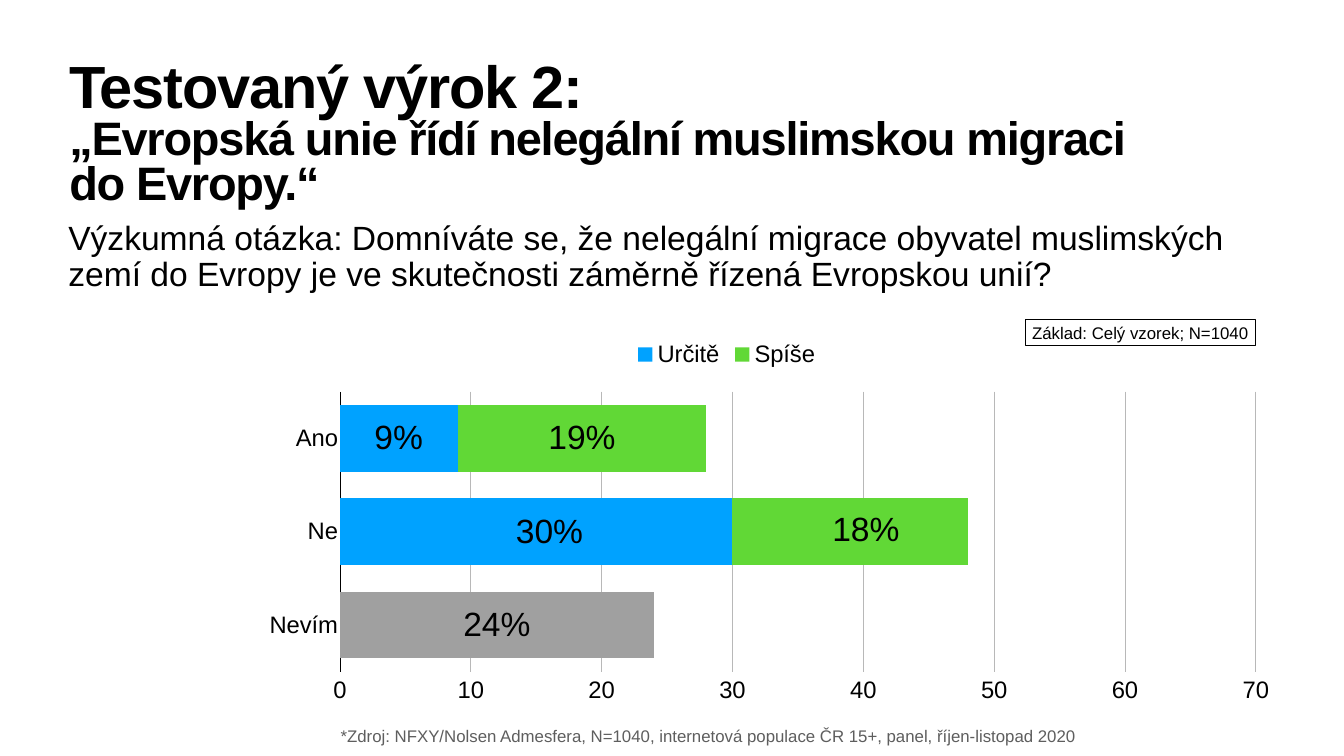
from lxml import etree
from pptx import Presentation
from pptx.chart.data import CategoryChartData
from pptx.dml.color import RGBColor
from pptx.enum.chart import XL_CHART_TYPE, XL_LABEL_POSITION, XL_LEGEND_POSITION, XL_TICK_LABEL_POSITION, XL_TICK_MARK
from pptx.enum.shapes import MSO_SHAPE
from pptx.enum.text import MSO_ANCHOR, MSO_AUTO_SIZE, PP_ALIGN
from pptx.oxml.ns import qn
from pptx.util import Pt

BAR_STACKED = XL_CHART_TYPE.BAR_STACKED
CENTER_LABEL = XL_LABEL_POSITION.CENTER
LEGEND_TOP = XL_LEGEND_POSITION.TOP
HIGH = XL_TICK_LABEL_POSITION.HIGH
NO_TICK = XL_TICK_MARK.NONE
RECTANGLE = MSO_SHAPE.RECTANGLE
TOP, MIDDLE = MSO_ANCHOR.TOP, MSO_ANCHOR.MIDDLE
LEFT, CENTER = PP_ALIGN.LEFT, PP_ALIGN.CENTER
NO_AUTO_SIZE = MSO_AUTO_SIZE.NONE

FONT = "Arial"
BLACK, GRAY, GRID = "000000", "5E5E5E", "B8B8B8"
BLUE, GREEN, NEUTRAL = "00A2FF", "61D836", "A0A0A0"
PERCENT = '#,##0"%"'
INSET = 4


def color(value):
    return RGBColor.from_string(value)


def style_font(font, size, value=BLACK, bold=False):
    font.name = FONT
    font.size = Pt(size)
    font.bold = bold
    font.color.rgb = color(value)


def style_line(line, value):
    line.color.rgb = color(value)
    line.width = Pt(1)


def place(shape, left, top, width, height):
    shape.left, shape.top = Pt(left), Pt(top)
    shape.width, shape.height = Pt(width), Pt(height)


def prepare_frame(shape, anchor, inset=INSET):
    frame = shape.text_frame
    frame.word_wrap = True
    frame.auto_size = NO_AUTO_SIZE
    frame.vertical_anchor = anchor
    frame.margin_left = frame.margin_right = Pt(inset)
    frame.margin_top = frame.margin_bottom = Pt(INSET)
    return frame.paragraphs[0]


def fill_title(title):
    place(title, 95, 85, 1779, 227.5)
    paragraph = prepare_frame(title, TOP)
    paragraph.alignment = LEFT
    paragraph.line_spacing = 0.8
    paragraph.space_before = Pt(0)
    lines = [
        ("Testovaný výrok 2:", 85),
        ("„Evropská unie řídí nelegální muslimskou migraci", 67),
        ("do Evropy.“", 67),
    ]
    for index, (text, size) in enumerate(lines):
        if index:
            paragraph.add_line_break()
        run = paragraph.add_run()
        run.text = text
        style_font(run.font, size, bold=True)
        run.font._element.set("spc", "-170")


def fill_body(body):
    place(body, 93.6, 312.5, 1730, 620)
    paragraph = prepare_frame(body, TOP)
    paragraph.text = (
        "Výzkumná otázka: Domníváte se, že nelegální migrace obyvatel muslimských "
        "zemí do Evropy je ve skutečnosti záměrně řízená Evropskou unií?"
    )
    paragraph.line_spacing = 0.9
    paragraph.space_before = Pt(0)
    style_font(paragraph.font, 48)
    properties = paragraph._p.get_or_add_pPr()
    properties.set("marL", "0")
    properties.set("indent", "0")
    bullet = etree.Element(qn("a:buNone"))
    properties.find(qn("a:defRPr")).addprevious(bullet)


def add_note(shape, text, value, inset):
    shape.shadow.inherit = False
    paragraph = prepare_frame(shape, MIDDLE, inset)
    paragraph.text = text
    paragraph.alignment = CENTER
    style_font(paragraph.font, 24, value)


def make_layout(**settings):
    layout = etree.Element(qn("c:layout"))
    manual = etree.SubElement(layout, qn("c:manualLayout"))
    for name, value in settings.items():
        etree.SubElement(manual, qn(f"c:{name}")).set("val", str(value))
    return layout


def set_plot_layout(chart):
    area = chart._chartSpace.chart.plotArea
    for layout in area.findall(qn("c:layout")):
        area.remove(layout)
    area.insert(0, make_layout(
        layoutTarget="inner", xMode="edge", yMode="edge",
        x=0.226, y=0.181, w=0.757, h=0.712,
    ))


def style_axes(chart):
    categories, values = chart.category_axis, chart.value_axis
    for axis in (categories, values):
        axis.major_tick_mark = axis.minor_tick_mark = NO_TICK
        style_font(axis.tick_labels.font, 34)
    categories.reverse_order = True
    style_line(categories.format.line, BLACK)
    values.tick_label_position = HIGH
    values.minimum_scale, values.maximum_scale, values.major_unit = 0, 70, 10
    values.tick_labels.number_format = "#,##0"
    values.tick_labels.number_format_is_linked = False
    values.format.line.fill.background()
    values.has_major_gridlines = True
    style_line(values.major_gridlines.format.line, GRID)


def style_series(series, value):
    series.format.fill.solid()
    series.format.fill.fore_color.rgb = color(value)
    labels = series.data_labels
    labels.show_value = True
    labels.number_format = PERCENT
    labels.number_format_is_linked = False
    labels.position = CENTER_LABEL
    style_font(labels.font, 48)


def shift_label(point, x, y):
    label = point.data_label
    style_font(label.font, 48)
    label.position = CENTER_LABEL
    element = point._element.find(qn("c:dLbls")).find(qn("c:dLbl"))
    number_format = etree.Element(qn("c:numFmt"))
    number_format.set("formatCode", PERCENT)
    number_format.set("sourceLinked", "0")
    element.insert(1, make_layout(x=x, y=y))
    element.insert(2, number_format)


def style_legend(chart):
    chart.has_legend = True
    legend = chart.legend
    legend.position = LEGEND_TOP
    legend.include_in_layout = True
    style_font(legend.font, 34)
    element = legend._element
    for layout in element.findall(qn("c:layout")):
        element.remove(layout)
    element.find(qn("c:legendPos")).addnext(
        make_layout(xMode="edge", yMode="edge", x=0.466, y=0.04)
    )


def add_answer_chart(slide):
    data = CategoryChartData()
    data.categories = ["Ano", "Ne", "Nevím"]
    data.add_series("Určitě", (9, 30, 24))
    data.add_series("Spíše", (19, 18, None))
    chart = slide.shapes.add_chart(
        BAR_STACKED, Pt(95), Pt(458), Pt(1728.7), Pt(561.6), data
    ).chart
    chart.has_title = False
    style_font(chart.font, 10, GRAY)
    plot = chart.plots[0]
    plot.gap_width, plot.overlap = 40, 100
    plot.vary_by_categories = False
    style_axes(chart)
    for series, value in zip(plot.series, (BLUE, GREEN)):
        style_series(series, value)
    certain, rather = plot.series
    unsure = certain.points[2].format.fill
    unsure.solid()
    unsure.fore_color.rgb = color(NEUTRAL)
    shift_label(certain.points[1], 0.011, 0)
    shift_label(rather.points[1], 0.013, -0.005)
    style_legend(chart)
    set_plot_layout(chart)


def main():
    presentation = Presentation()
    presentation.slide_width, presentation.slide_height = Pt(1920.24), Pt(1080)
    slide = presentation.slides.add_slide(presentation.slide_layouts[1])
    fill_title(slide.shapes.title)
    fill_body(slide.placeholders[1])
    add_answer_chart(slide)

    sample = slide.shapes.add_shape(RECTANGLE, Pt(1464.5), Pt(456.5), Pt(329), Pt(37.4))
    sample.fill.background()
    style_line(sample.line, BLACK)
    add_note(sample, "Základ: Celý vzorek; N=1040", BLACK, INSET)

    source = slide.shapes.add_textbox(Pt(454.3), Pt(1032.5), Pt(1114.6), Pt(36))
    add_note(source, "*Zdroj: NFXY/Nolsen Admesfera, N=1040, internetová populace ČR 15+, "
             "panel, říjen-listopad 2020", GRAY, 7.2)
    presentation.save("out.pptx")


if __name__ == "__main__":
    main()
